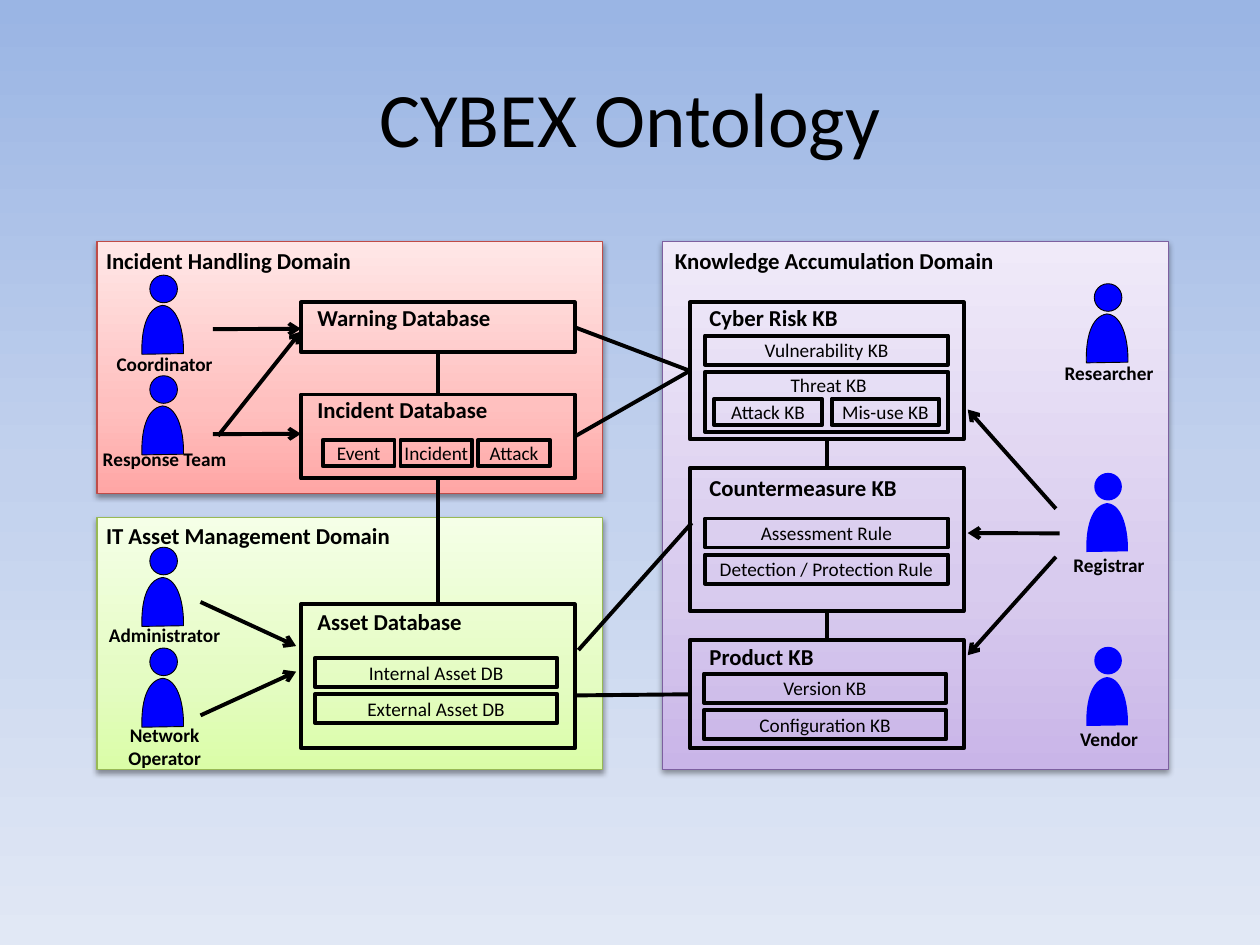
from dataclasses import dataclass
from typing import NamedTuple

from lxml.etree import SubElement
from pptx import Presentation
from pptx.dml.color import RGBColor as RGB
from pptx.enum.shapes import MSO_CONNECTOR as Link, MSO_SHAPE as Kind
from pptx.enum.text import MSO_ANCHOR as Anchor, MSO_AUTO_SIZE as Auto, PP_ALIGN as Align
from pptx.oxml.ns import qn
from pptx.util import Pt


@dataclass(frozen=True)
class Theme:
    font: str = "Calibri"
    ink: str = "000000"
    blue: str = "0000FF"
    sky: tuple = ("9AB5E4", "C2D1ED", "E1E8F5")
    red: tuple = ("FFA6A5", "FFC0BF", "FFE7E7")
    green: tuple = ("DAFDA7", "E4FCC2", "F5FFE7")
    violet: tuple = ("C9B5E8", "D8CBEE", "F0EAF9")
    title: float = 44
    head: float = 13
    small: float = 11
    thick: float = 2.25


class Domain(NamedTuple):
    left: float
    top: float
    high: float
    shades: tuple
    edge: str
    name: str
    inset: float


class Store(NamedTuple):
    left: float
    top: float
    high: float
    name: str
    drop: float  # heading below the top edge


class Strip(NamedTuple):
    left: float
    top: float
    wide: float
    high: float
    dx: float
    dy: float
    names: tuple


class Actor(NamedTuple):
    left: float
    top: float
    name: str
    low: float  # top of the label
    edged: bool = True


class Tie(NamedTuple):
    start: tuple  # (x, y) or (store, side)
    end: tuple
    arrow: bool = False


T = Theme()
TOP, LEFT, BASE, RIGHT = range(4)
COL1, COL2, WIDE = 172, 394.2, 156.5
WARN, INC, ASSET = "Warning Database", "Incident Database", "Asset Database"
RISK, COUNTER, PROD = "Cyber Risk KB", "Countermeasure KB", "Product KB"

DOMAINS = [
    Domain(378.7, 138.2, 301.7, T.violet, "7D60A0", "Knowledge Accumulation Domain", 7),
    Domain(55.4, 295.7, 144, T.green, "98B955", "IT Asset Management Domain", 5.2),
    Domain(55.4, 138.2, 144, T.red, "BF4C48", "Incident Handling Domain", 5.2),
]
STORES = [
    Store(COL1, 172.8, 28.5, WARN, 0.7),
    Store(COL1, 225.4, 48, INC, 0.7),
    Store(COL1, 345.3, 82.3, ASSET, 1.7),
    Store(COL2, 172.8, 78.2, RISK, 0.7),
    Store(COL2, 267.5, 81.7, COUNTER, 3.2),
    Store(COL2, 365.8, 61.9, PROD, 1.4),
]
STRIPS = [
    Strip(184.5, 251.3, 41, 15.1, 44.4, 0, ("Event", "Incident", "Attack")),
    Strip(180, 376, 138.5, 16.6, 0, 20.6, ("Internal Asset DB", "External Asset DB")),
    Strip(402.9, 191.8, 138.8, 16.6, 0, 0, ("Vulnerability KB",)),
    Strip(402.9, 212.5, 138.8, 34.4, 0, 0, ("",)),
    Strip(408.2, 227.8, 61.5, 15.1, 67, 0, ("Attack KB", "Mis-use KB")),
    Strip(402.9, 296.3, 138.8, 16.6, 0, 20.6,
          ("Assessment Rule", "Detection / Protection Rule")),
    Strip(402.2, 385, 138.5, 16.6, 0, 20.8, ("Version KB", "Configuration KB")),
]
ACTORS = [
    Actor(85.6, 157.2, "Coordinator", 201.2),
    Actor(85.6, 214.7, "Response Team", 255.7),
    Actor(85.6, 312.7, "Administrator", 356),
    Actor(85.6, 370.3, "Network Operator", 413.3),
    Actor(625.3, 162.1, "Researcher", 206.2),
    Actor(625.3, 270.2, "Registrar", 316.1, False),
    Actor(625.3, 369.6, "Vendor", 415.5, False),
]
TIES = [
    Tie((WARN, BASE), (INC, TOP)),
    Tie((INC, BASE), (ASSET, TOP)),
    Tie((RISK, BASE), (COUNTER, TOP)),
    Tie((COUNTER, BASE), (PROD, TOP)),
    Tie((WARN, RIGHT), (RISK, LEFT)),
    Tie((INC, RIGHT), (RISK, LEFT)),
    Tie((327.6, 397.4), (PROD, LEFT)),
    Tie((330.5, 371.5), (395.3, 298.8)),
    Tie((121.7, 188.1), (COL1, 187.9), True),
    Tie((124.6, 249.1), (COL1, 189.4), True),
    Tie((121.7, 248.1), (COL1, 247.9), True),
    Tie((114.6, 344), (169.2, 369.2), True),
    Tie((114.6, 408.8), (169.2, 383.8), True),
    Tie((603.4, 290.7), (553, 234), True),
    Tie((605.5, 304.8), (553, 304.6), True),
    Tie((603.4, 318.2), (553, 374.4), True),
]
# Outline of a body: the start, then three points for each curve
BODY = [(0.4, 28), (0, 14.4), (2.9, 1.4), (12.2, 0), (21.6, 0.7), (24.5, 16.5),
        (24.2, 27.6), (12.2, 28), (12.2, 28), (0.4, 28)]


def rgb(code: str) -> RGB:
    return RGB.from_string(code)


def shade(root, fill, shades: tuple, mid: int, angle: float) -> None:
    fill.gradient()
    fill.gradient_angle = angle
    stops = next(root.iter(qn("a:gsLst")))
    stops.clear()
    for pos, code in zip((0, mid, 100), shades):
        stop = SubElement(stops, qn("a:gs"), pos=str(pos * 1000))
        SubElement(stop, qn("a:srgbClr"), val=code)


def write(frame, text: str, size: float, bold: bool = False, align=Align.CENTER,
          anchor=Anchor.MIDDLE) -> None:
    frame.word_wrap = True
    frame.vertical_anchor = anchor
    frame.margin_left = frame.margin_right = frame.margin_top = frame.margin_bottom = 0
    para = frame.paragraphs[0]
    para.text, para.alignment = text, align
    font = para.font
    font.name, font.size, font.bold = T.font, Pt(size), bold
    font.color.rgb = rgb(T.ink)


def label(slide, left: float, top: float, wide: float, text: str, size: float,
          bold: bool = True, align=Align.LEFT) -> None:
    box = slide.shapes.add_textbox(Pt(left), Pt(top), Pt(wide), Pt(size * 1.2))
    write(box.text_frame, text, size, bold, align, Anchor.TOP)
    box.text_frame.auto_size = Auto.SHAPE_TO_FIT_TEXT


def rect(slide, left: float, top: float, wide: float, high: float,
         edge: str = T.ink, width: float = T.thick):
    shape = slide.shapes.add_shape(Kind.RECTANGLE, Pt(left), Pt(top), Pt(wide), Pt(high))
    shape.shadow.inherit = False
    shape.fill.background()
    shape.line.color.rgb, shape.line.width = rgb(edge), Pt(width)
    return shape


def domain(slide, d: Domain) -> None:
    shape = rect(slide, d.left, d.top, 289, d.high, d.edge, 0.75)
    props = shape._element.spPr
    shade(props, shape.fill, d.shades, 35, 90)
    cast = SubElement(props.find(qn("a:effectLst")), qn("a:outerShdw"), dir="5400000",
                      blurRad=str(Pt(3.1)), dist=str(Pt(1.6)), rotWithShape="0")
    tint = SubElement(cast, qn("a:srgbClr"), val=T.ink)
    SubElement(tint, qn("a:alpha"), val="38000")
    label(slide, d.left + d.inset, d.top + 2.6, 260, d.name, T.head)


def store(slide, s: Store):
    pad = 9.4 if s.left == COL1 else 11.2
    label(slide, s.left + pad, s.top + s.drop, 140, s.name, T.head)
    return rect(slide, s.left, s.top, WIDE, s.high)


def strip(slide, s: Strip) -> None:
    for i, name in enumerate(s.names):
        cell = rect(slide, s.left + i * s.dx, s.top + i * s.dy, s.wide, s.high)
        if name:
            write(cell.text_frame, name, T.small)


def bend(shape) -> None:
    """Turn each three straight segments into one cubic curve."""
    lines = list(shape._element.iter(qn("a:lnTo")))
    for first, *rest in zip(lines[::3], lines[1::3], lines[2::3]):
        first.tag = qn("a:cubicBezTo")
        for seg in rest:
            first.append(seg[0])
            seg.getparent().remove(seg)


def actor(slide, a: Actor) -> None:
    group = slide.shapes.add_group_shape().shapes
    head = group.add_shape(Kind.OVAL, Pt(a.left), Pt(a.top), Pt(15.8), Pt(15.8))
    spots = [(Pt(a.left - 4.9 + x), Pt(a.top + 17.3 + y)) for x, y in BODY]
    pen = group.build_freeform(*spots[0])
    pen.add_line_segments(spots[1:], close=True)
    body = pen.convert_to_shape()
    bend(body)
    for part in (head, body):
        part.shadow.inherit = False
        part.fill.solid()
        part.fill.fore_color.rgb = rgb(T.blue)
        if a.edged:
            part.line.color.rgb, part.line.width = rgb(T.ink), Pt(0.5)
        else:
            part.line.fill.background()
    label(slide, a.left - 31.5, a.low, 79.9, a.name, T.small, align=Align.CENTER)


def tie(slide, t: Tie, stores: dict) -> None:
    spots = [(0, 0) if isinstance(p[0], str) else p for p in (t.start, t.end)]
    line = slide.shapes.add_connector(Link.STRAIGHT, *(Pt(v) for p in spots for v in p))
    for (name, side), join in ((t.start, line.begin_connect), (t.end, line.end_connect)):
        if name in stores:
            join(stores[name], side)
    line.line.color.rgb, line.line.width = rgb(T.ink), Pt(T.thick)
    props = line._element.spPr
    if t.arrow:
        SubElement(props.find(qn("a:ln")), qn("a:tailEnd"), type="arrow")
    SubElement(props, qn("a:effectLst"))


def main() -> None:
    deck = Presentation()
    deck.slide_width, deck.slide_height = Pt(720), Pt(540)
    slide = deck.slides.add_slide(deck.slide_layouts[6])
    shade(slide._element, slide.background.fill, T.sky, 50, 270)

    # Domains and title
    for d in DOMAINS:
        domain(slide, d)
    title = slide.shapes.add_textbox(Pt(36), Pt(21.6), Pt(648), Pt(90))
    write(title.text_frame, "CYBEX Ontology", T.title)

    # Databases, knowledge bases and their parts
    stores = {s.name: store(slide, s) for s in STORES}
    for s in STRIPS:
        strip(slide, s)
    label(slide, 405.4, 213.1, 136.1, "Threat KB", T.small, False, Align.CENTER)

    # People and links
    for a in ACTORS:
        actor(slide, a)
    for t in TIES:
        tie(slide, t, stores)
    deck.save("out.pptx")


if __name__ == "__main__":
    main()
